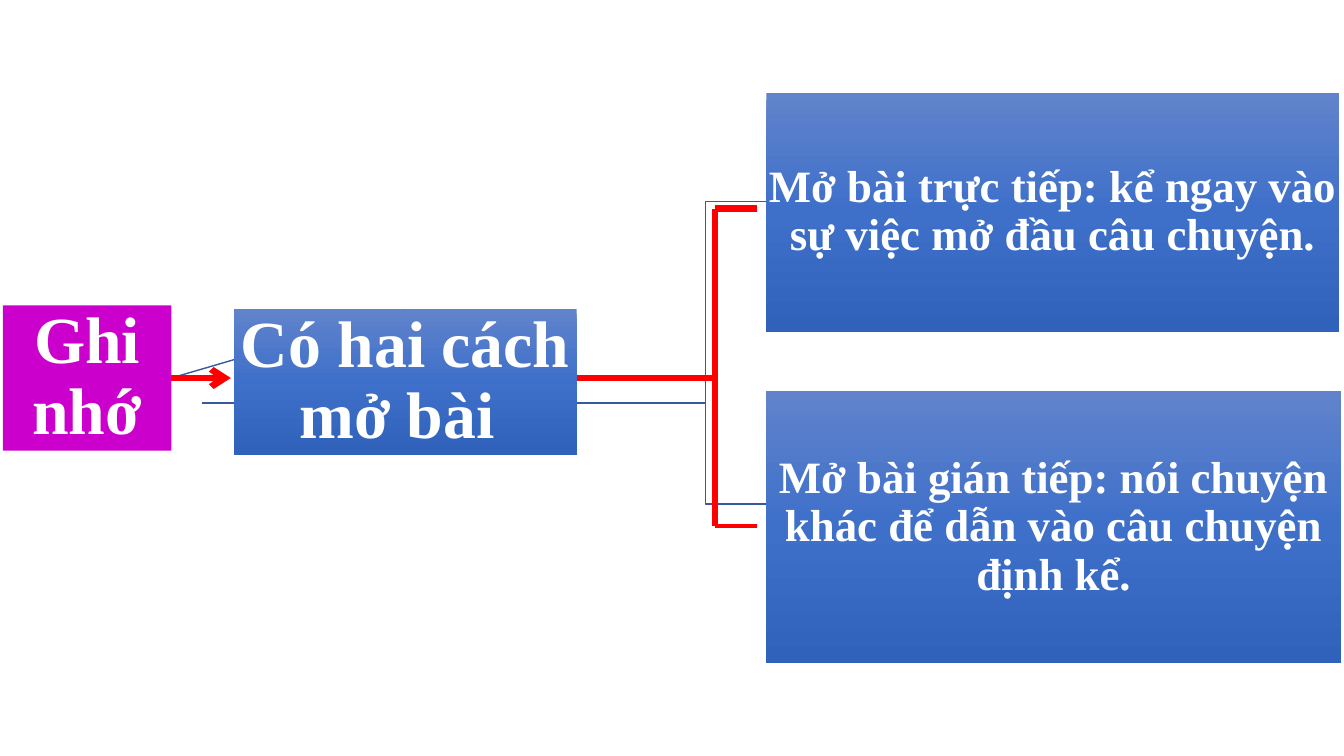
from copy import deepcopy
from dataclasses import dataclass

from lxml.etree import SubElement
from pptx import Presentation
from pptx.dml.color import RGBColor
from pptx.enum.shapes import MSO_CONNECTOR, MSO_SHAPE
from pptx.enum.text import MSO_ANCHOR, PP_ALIGN
from pptx.oxml.ns import qn
from pptx.util import Inches, Pt


@dataclass(frozen=True)
class Theme:
    font: str = "Times New Roman"
    text: str = "FFFFFF"
    topic: str = "CC00CC"
    branch: tuple = ("6183CB", "3E70CA", "3062BB")
    thin: str = "365B9D"
    accent: str = "FF0000"
    heading_size: float = 47
    body_size: float = 32
    thin_width: float = 1
    accent_width: float = 4.5
    foot_width: float = 3


class MindMap:
    def __init__(self, slide, theme):
        self.slide = slide
        self.theme = theme

    def set_line(self, shape, color, width):
        shape.line.color.rgb = RGBColor.from_string(color)
        shape.line.width = Pt(width)

    def line(self, start, end, color, width, arrow=False):
        ends = [Inches(v) for v in (*start, *end)]
        link = self.slide.shapes.add_connector(MSO_CONNECTOR.STRAIGHT, *ends)
        self.set_line(link, color, width)
        properties = link._element.spPr
        if arrow:
            SubElement(properties.find(qn("a:ln")), qn("a:tailEnd"), type="arrow")
        SubElement(properties, qn("a:effectLst"))
        return link

    def elbow(self, points):
        builder = self.slide.shapes.build_freeform(*points[0], scale=Inches(1))
        builder.add_line_segments(points[1:], close=False)
        path = builder.convert_to_shape()
        path.shadow.inherit = False
        path.fill.background()
        self.set_line(path, self.theme.thin, self.theme.thin_width)

    def gradient(self, shape, colors):
        shape.fill.gradient()
        shape.fill.gradient_angle = 270
        stop_list = shape._element.spPr.find(".//" + qn("a:gsLst"))
        stop_list.append(deepcopy(stop_list[-1]))
        for index, (stop, color) in enumerate(zip(shape.fill.gradient_stops, colors)):
            stop.position = index / (len(colors) - 1)
            stop.color.rgb = RGBColor.from_string(color)

    def box(self, bounds, text, size, fill, inset):
        box = self.slide.shapes.add_shape(MSO_SHAPE.RECTANGLE, *map(Inches, bounds))
        box.shadow.inherit = False
        box.line.fill.background()
        if isinstance(fill, tuple):
            self.gradient(box, fill)
        else:
            box.fill.solid()
            box.fill.fore_color.rgb = RGBColor.from_string(fill)

        frame = box.text_frame
        paragraph = frame.paragraphs[0]
        paragraph.text = text
        margins = {f"margin_{side}": Inches(inset)
                   for side in ("left", "right", "top", "bottom")}
        formats = (
            (frame, {"word_wrap": True, "vertical_anchor": MSO_ANCHOR.MIDDLE, **margins}),
            (paragraph, {"alignment": PP_ALIGN.CENTER, "line_spacing": 0.9}),
            (paragraph.runs[0].font, {"name": self.theme.font, "size": Pt(size), "bold": True}),
        )
        for target, values in formats:
            for name, value in values.items():
                setattr(target, name, value)
        paragraph.runs[0].font.color.rgb = RGBColor.from_string(self.theme.text)
        return box


def main():
    deck = Presentation()
    deck.slide_width, deck.slide_height = Inches(13.33), Inches(7.5)
    theme = Theme()
    lesson = MindMap(deck.slides.add_slide(deck.slide_layouts[6]), theme)

    # Thin links behind the boxes
    topic_edge, axis, bend, branch_left = 1.7, 3.75, 7.12, 7.6
    methods_link = lesson.line((topic_edge, axis), (4.02, 3.07), theme.thin, theme.thin_width)
    for branch_y in (5.23, 2.1):
        lesson.elbow([(topic_edge, axis), (bend, axis), (bend, branch_y), (branch_left, branch_y)])

    # Topic, the two openings and their parent
    topic = lesson.box((0.03, 3.03, 1.67, 1.44), "Ghi nhớ",
                       theme.heading_size, theme.topic, 0.03)
    lesson.box((branch_left, 0.92, 5.68, 2.37),
               "Mở bài trực tiếp: kể ngay vào sự việc mở đầu câu chuyện.",
               theme.body_size, theme.branch, 0.02)
    lesson.box((branch_left, 3.88, 5.7, 2.7),
               "Mở bài gián tiếp: nói chuyện khác để dẫn vào câu chuyện định kể.",
               theme.body_size, theme.branch, 0.02)
    methods = lesson.box((2.32, 3.07, 3.4, 1.44), "Có hai cách mở bài ",
                         theme.heading_size, theme.branch, 0.03)
    methods_link.begin_connect(topic, 3)
    methods_link.end_connect(methods, 0)

    # Red arrow and bracket
    bracket_x, bracket_end, bracket_top, bracket_foot = 7.09, 7.51, 2.07, 5.22
    arrow = lesson.line((topic_edge, axis), (2.29, axis),
                        theme.accent, theme.accent_width, arrow=True)
    arrow.begin_connect(topic, 3)
    for start, end, width in (
        ((5.72, axis), (bracket_x, axis), theme.accent_width),
        ((bracket_x, bracket_top), (bracket_x, bracket_foot), theme.accent_width),
        ((bracket_x, bracket_top), (bracket_end, bracket_top), theme.accent_width),
        ((bracket_x, bracket_foot), (bracket_end, bracket_foot), theme.foot_width),
    ):
        lesson.line(start, end, theme.accent, width)

    deck.save("out.pptx")


if __name__ == "__main__":
    main()
